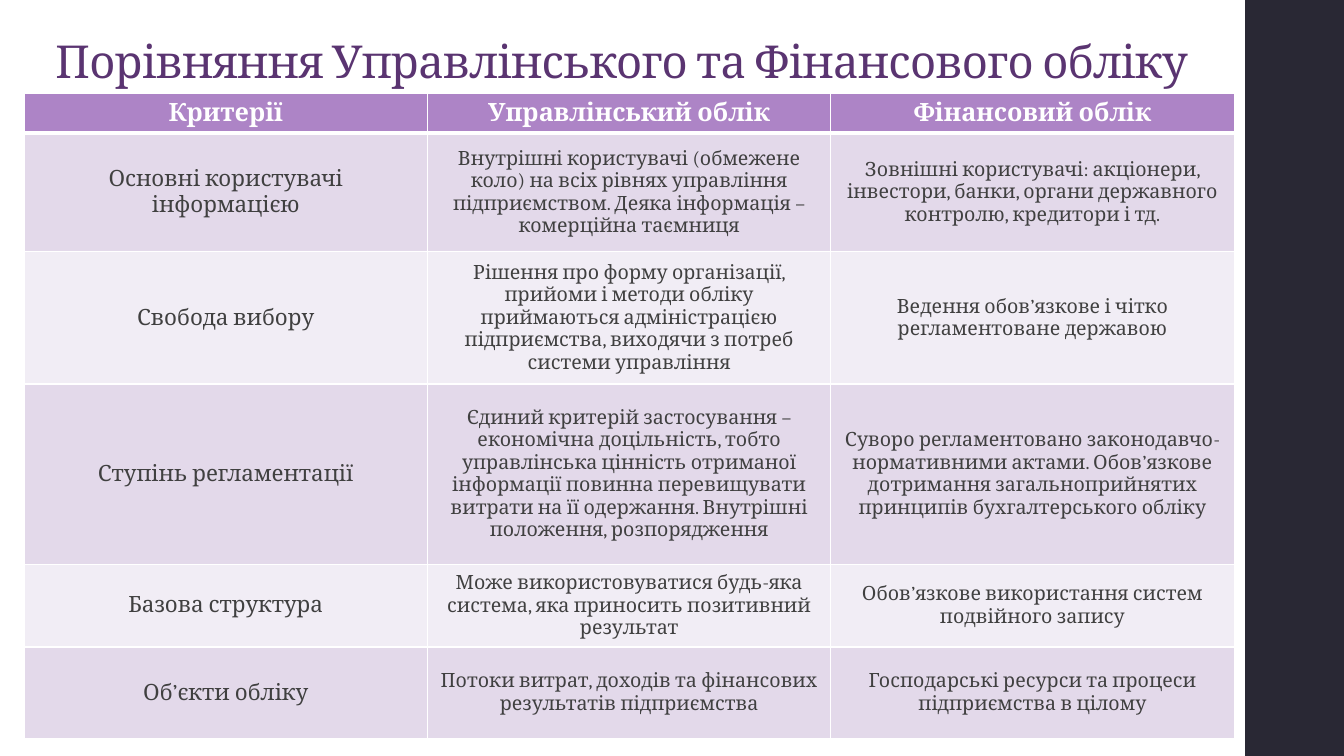
from pptx import Presentation
from pptx.dml.color import RGBColor
from pptx.enum.shapes import MSO_SHAPE as Shape
from pptx.enum.text import MSO_ANCHOR as Anchor, MSO_AUTO_SIZE as Fit, PP_ALIGN as Align
from pptx.oxml import parse_xml
from pptx.oxml.ns import nsdecls
from pptx.util import Inches, Pt

WIDTHS = [4, 4, 4]
HEIGHTS = [0.37, 1.18, 1.31, 1.79, 0.82, 0.91]
ROWS = [
    ("Критерії", "Управлінський облік", "Фінансовий облік"),
    ("Основні користувачі інформацією",
     "Внутрішні користувачі (обмежене коло) на всіх рівнях управління "
     "підприємством. Деяка інформація – комерційна таємниця",
     "Зовнішні користувачі: акціонери, інвестори, банки, органи державного "
     "контролю, кредитори і тд."),
    ("Свобода вибору",
     "Рішення про форму організації, прийоми і методи обліку приймаються "
     "адміністрацією підприємства, виходячи з потреб системи управління",
     "Ведення обов’язкове і чітко регламентоване державою"),
    ("Ступінь регламентації",
     "Єдиний критерій застосування – економічна доцільність, тобто "
     "управлінська цінність отриманої інформації повинна перевищувати витрати "
     "на її одержання. Внутрішні положення, розпорядження",
     "Суворо регламентовано законодавчо-нормативними актами. Обов’язкове "
     "дотримання загальноприйнятих принципів бухгалтерського обліку"),
    ("Базова структура",
     "Може використовуватися будь-яка система, яка приносить позитивний результат",
     "Обов’язкове використання систем подвійного запису"),
    ("Об’єкти обліку",
     "Потоки витрат, доходів та фінансових результатів підприємства",
     "Господарські ресурси та процеси підприємства в цілому"),
]


def color(code):
    return RGBColor.from_string(code)


class Deck:
    face = "Cambria"
    dark, violet, head = "292834", "5A3471", "AD84C6"
    bands = ["F1EDF5", "E3D9EA"]
    ink, white = "404040", "FFFFFF"

    def __init__(self):
        self.show = Presentation()
        self.show.slide_width = Inches(13.33)
        self.show.slide_height = Inches(7.5)
        self.slide = self.show.slides.add_slide(self.show.slide_layouts[5])

    def style(self, para, size, code, bold=False):
        para.alignment = Align.CENTER
        font = para.font
        font.name, font.size, font.bold = self.face, Pt(size), bold
        font.color.rgb = color(code)

    def title(self, text, *box):
        shape = self.slide.shapes.title
        shape.left, shape.top, shape.width, shape.height = map(Inches, box)
        frame = shape.text_frame
        frame.text = text
        frame.word_wrap = True
        frame.auto_size = Fit.NONE
        frame.vertical_anchor = Anchor.BOTTOM
        para = frame.paragraphs[0]
        para.line_spacing = 0.9
        self.style(para, 32.4, self.violet)
        para.runs[0].font._element.set("spc", "-50")

    def bar(self, *box):
        shape = self.slide.shapes.add_shape(Shape.RECTANGLE, *map(Inches, box))
        shape.shadow.inherit = False
        shape.fill.solid()
        shape.fill.fore_color.rgb = color(self.dark)
        shape.line.fill.background()

    def edges(self, cell, **sides):
        props = cell._tc.get_or_add_tcPr()
        for side in "LRTB":
            width = Pt(sides.get(side, 1))
            props.append(parse_xml(
                f'<a:ln{side} {nsdecls("a")} w="{width}"><a:solidFill>'
                f'<a:srgbClr val="{self.white}"/></a:solidFill></a:ln{side}>'))

    def cell(self, cell, text, row, col):
        cell.text = text
        cell.vertical_anchor = Anchor.MIDDLE
        para = cell.text_frame.paragraphs[0]
        if row == 0:
            self.style(para, 18, self.white, True)
            self.edges(cell, B=3)
        else:
            self.style(para, 14 if col else 16, self.ink)
            self.edges(cell, T=3 if row == 1 else 1)
        cell.fill.solid()
        cell.fill.fore_color.rgb = color(self.bands[row % 2] if row else self.head)

    def table(self, rows, widths, heights, left, top):
        grid = self.slide.shapes.add_table(
            len(rows), len(widths), Inches(left), Inches(top),
            Inches(sum(widths)), Inches(sum(heights))).table
        for col, width in zip(grid.columns, widths):
            col.width = Inches(width)
        for row, height in zip(grid.rows, heights):
            row.height = Inches(height)
        for r, texts in enumerate(rows):
            for c, text in enumerate(texts):
                self.cell(grid.cell(r, c), text, r, c)


def main():
    deck = Deck()
    deck.bar(12.35, 0, 0.98, 7.5)
    deck.title("Порівняння Управлінського та Фінансового обліку", 0.35, 0.4, 11.63, 0.53)
    deck.table(ROWS, WIDTHS, HEIGHTS, 0.24, 0.93)
    deck.show.save("out.pptx")


if __name__ == "__main__":
    main()
